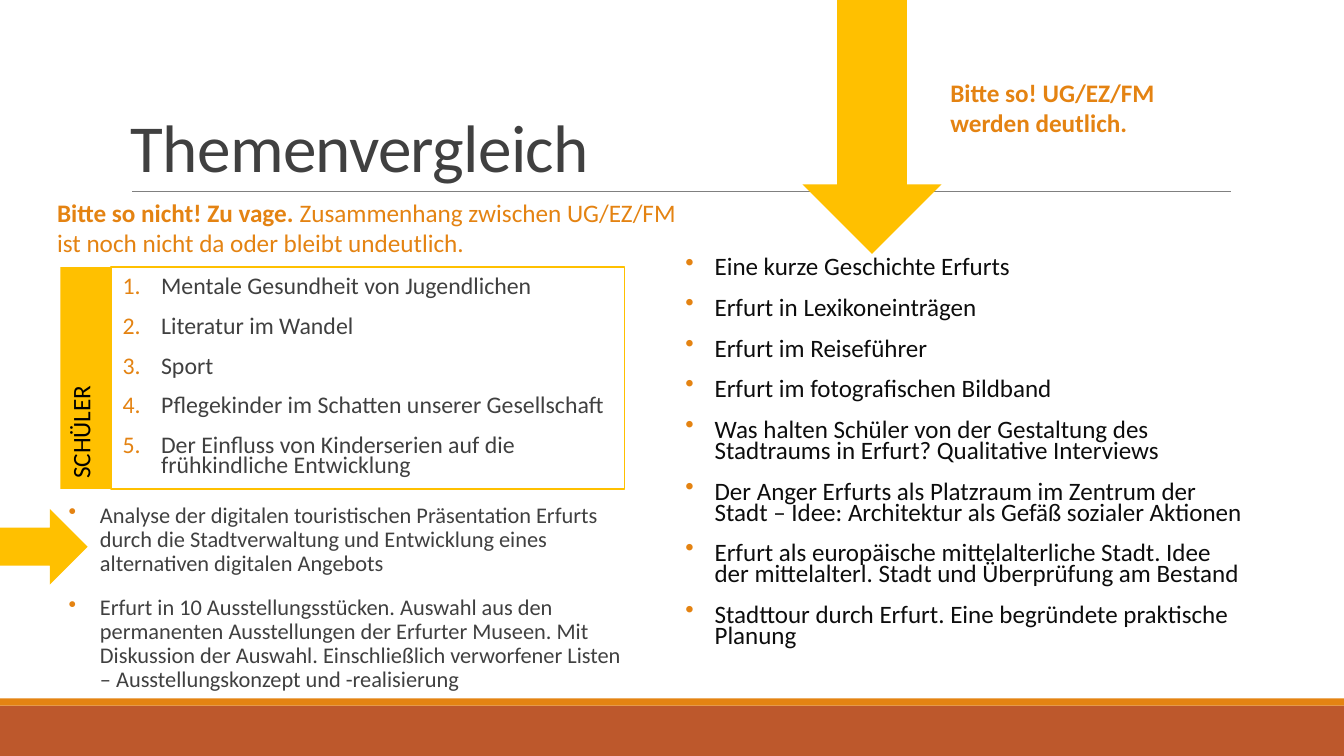
from lxml import etree
from pptx import Presentation
from pptx.dml.color import RGBColor
from pptx.enum.shapes import MSO_CONNECTOR, MSO_SHAPE
from pptx.enum.text import MSO_ANCHOR, PP_ALIGN
from pptx.oxml.ns import qn
from pptx.util import Cm, Pt

RECTANGLE, DOWN_ARROW = MSO_SHAPE.RECTANGLE, MSO_SHAPE.DOWN_ARROW
STRAIGHT = MSO_CONNECTOR.STRAIGHT
TOP, BOTTOM = MSO_ANCHOR.TOP, MSO_ANCHOR.BOTTOM
LEFT = PP_ALIGN.LEFT

RUST = RGBColor(0xBD, 0x58, 0x2C)
ORANGE = RGBColor(0xE4, 0x83, 0x12)
GOLD = RGBColor(0xFF, 0xC0, 0x00)
GRAY = RGBColor(0x80, 0x80, 0x80)
DARK = RGBColor(0x40, 0x40, 0x40)
INK = RGBColor(0x0D, 0x0D, 0x0D)
BLACK = RGBColor(0, 0, 0)

STUDENT_TOPICS = [
    "Mentale Gesundheit von Jugendlichen",
    "Literatur im Wandel",
    "Sport",
    "Pflegekinder im Schatten unserer Gesellschaft",
    "Der Einfluss von Kinderserien auf die frühkindliche Entwicklung",
]
ERFURT_TOPICS = [
    "Eine kurze Geschichte Erfurts",
    "Erfurt in Lexikoneinträgen",
    "Erfurt im Reiseführer",
    "Erfurt im fotografischen Bildband",
    "Was halten Schüler von der Gestaltung des Stadtraums in Erfurt? Qualitative Interviews",
    "Der Anger Erfurts als Platzraum im Zentrum der Stadt – Idee: Architektur als Gefäß sozialer Aktionen",
    "Erfurt als europäische mittelalterliche Stadt. Idee der mittelalterl. Stadt und Überprüfung am Bestand",
    "Stadttour durch Erfurt. Eine begründete praktische Planung",
]
PROJECT_TOPICS = [
    "Analyse der digitalen touristischen Präsentation Erfurts durch die Stadtverwaltung "
    "und Entwicklung eines alternativen digitalen Angebots",
    "Erfurt in 10 Ausstellungsstücken. Auswahl aus den permanenten Ausstellungen der Erfurter Museen. "
    "Mit Diskussion der Auswahl. Einschließlich verworfener Listen – Ausstellungskonzept und -realisierung",
]

presentation = Presentation()
presentation.slide_width, presentation.slide_height = Cm(33.87), Cm(19.05)
slide = presentation.slides.add_slide(presentation.slide_layouts[6])


def add_block(kind, box, color):
    shape = slide.shapes.add_shape(kind, *map(Cm, box))
    shape.shadow.inherit = False
    shape.line.fill.background()
    if color is None:
        shape.fill.background()
    else:
        shape.fill.solid()
        shape.fill.fore_color.rgb = color
    return shape


def write(shape, paragraphs, size, color, frame_format, paragraph_format):
    frame = shape.text_frame
    for name, value in {"word_wrap": True, "vertical_anchor": TOP, **frame_format}.items():
        setattr(frame, name, value)
    for number, runs in enumerate(paragraphs):
        paragraph = frame.add_paragraph() if number else frame.paragraphs[0]
        for name, value in {"alignment": LEFT, **paragraph_format}.items():
            setattr(paragraph, name, value)
        if number == 0:
            paragraph.space_before = Pt(0)
        for text, bold in runs:
            run = paragraph.add_run()
            run.text = text
            run.font.color.rgb = color
            for name, value in {"name": "Calibri", "size": Pt(size), "bold": bold}.items():
                setattr(run.font, name, value)


add_block(RECTANGLE, (0, 17.78, 33.87, 1.27), RUST)
add_block(RECTANGLE, (0, 17.6, 33.87, 0.18), ORANGE)

title_rule = slide.shapes.add_connector(STRAIGHT, Cm(3.33), Cm(4.83), Cm(31.01), Cm(4.83))
title_rule.line.color.rgb = GRAY
title_rule.line.width = Pt(0.5)
etree.SubElement(title_rule._element.spPr, qn("a:effectLst"))

title = slide.shapes.add_textbox(Cm(3.05), Cm(0.79), Cm(27.94), Cm(4.04))
write(title, [[("Themenvergleich", False)]], 48, DARK, {"vertical_anchor": BOTTOM}, {"line_spacing": 0.85})
title.text_frame.paragraphs[0].runs[0]._r.get_or_add_rPr().set("spc", "-50")

student_box = add_block(RECTANGLE, (2.79, 6.73, 12.95, 5.59), None)
student_box.line.color.rgb = GOLD
student_box.line.width = Pt(1.25)
erfurt_box = slide.shapes.add_textbox(Cm(17.27), Cm(6.4), Cm(14.25), Cm(10.82))

student_label = add_block(RECTANGLE, (1.52, 6.73, 1.27, 5.59), GOLD)
write(student_label, [[("SCHÜLER", False)]], 18, BLACK, {}, {})
student_label.text_frame._txBody.bodyPr.set("vert", "vert270")

add_block(DOWN_ARROW, (20.22, 0, 3.51, 6.4), GOLD)
project_box = slide.shapes.add_textbox(Cm(1.73), Cm(12.57), Cm(14.25), Cm(5.23))

lists = [
    (student_box, STUDENT_TOPICS, 17, DARK, 0.7, 0.97, "buAutoNum", ("type", "arabicPeriod"), 0.3),
    (erfurt_box, ERFURT_TOPICS, 17.9, INK, 0.7, 0.74, "buChar", ("char", "•"), 0),
    (project_box, PROJECT_TOPICS, 16, DARK, 0.9, 0.79, "buChar", ("char", "•"), 0),
]
for shape, topics, size, color, spacing, indent, bullet, marker, inset in lists:
    frame_format = {"margin_left": Cm(inset), "margin_top": Cm(inset or 0.13), "margin_right": 0}
    paragraph_format = {"line_spacing": spacing, "space_before": Pt(12), "space_after": Pt(2)}
    write(shape, [[(topic, False)] for topic in topics], size, color, frame_format, paragraph_format)
    for paragraph in shape.text_frame.paragraphs:
        properties = paragraph._p.get_or_add_pPr()
        properties.set("marL", str(Cm(indent)))
        properties.set("indent", str(-Cm(indent)))
        bullet_color = etree.SubElement(properties, qn("a:buClr"))
        etree.SubElement(bullet_color, qn("a:srgbClr")).set("val", str(ORANGE))
        etree.SubElement(properties, qn("a:" + bullet)).set(*marker)

notes = [
    ((23.7, 1.83, 6.68, 1.8), [("Bitte so! UG/EZ/FM werden deutlich.", True)]),
    ((1.19, 4.85, 16.64, 1.8), [
        ("Bitte so nicht! Zu vage. ", True),
        ("Zusammenhang zwischen UG/EZ/FM ist noch nicht da oder bleibt undeutlich.", False),
    ]),
]
for box, runs in notes:
    write(slide.shapes.add_textbox(*map(Cm, box)), [runs], 18, ORANGE, {}, {})

project_arrow = add_block(DOWN_ARROW, (0.15, 12.67, 1.91, 2.21), GOLD)
project_arrow.rotation = 270

presentation.save("out.pptx")
